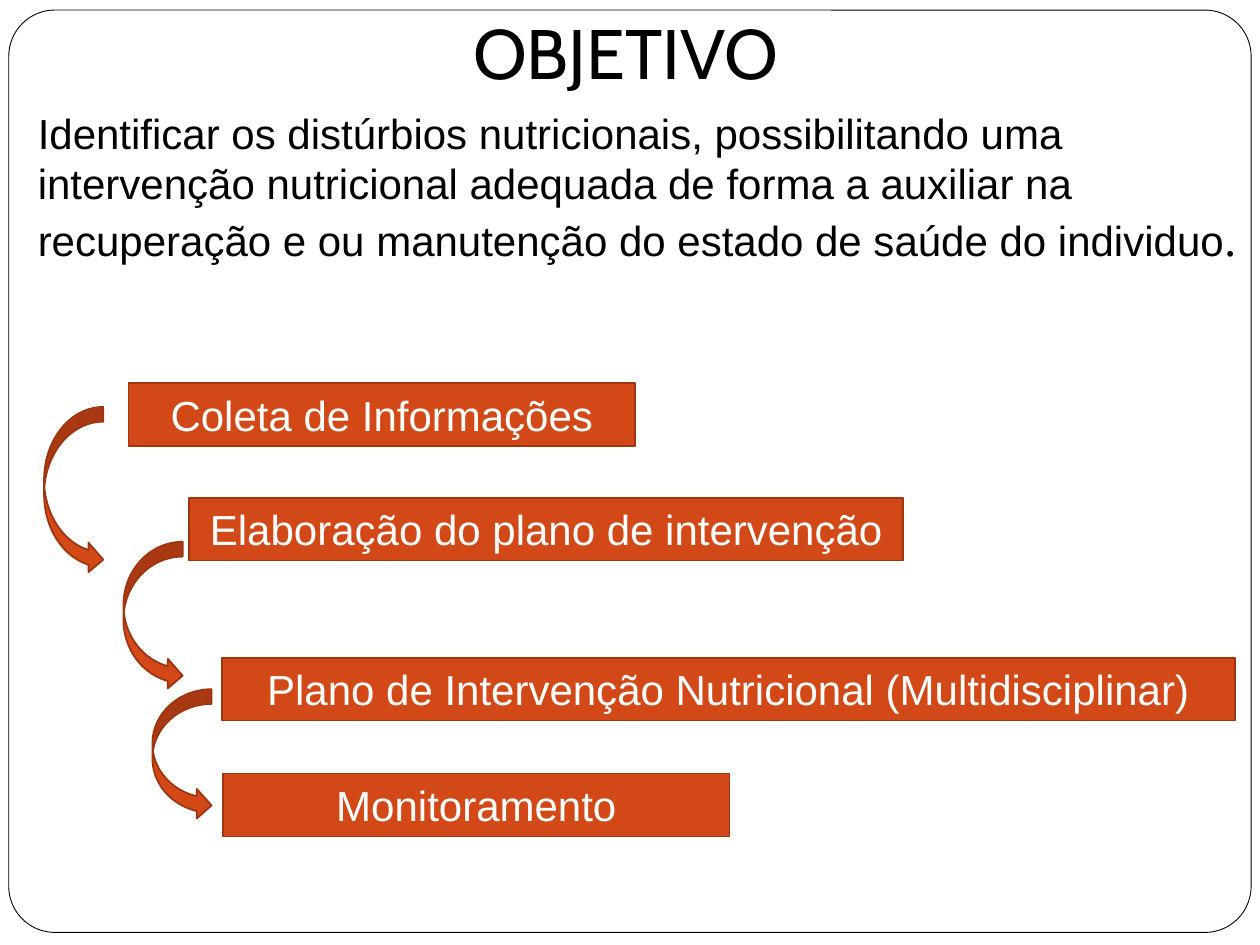
"""Build the OBJETIVO slide: a goal statement above a cascade of four steps."""
from lxml import etree
from pptx import Presentation
from pptx import util as u
from pptx.dml.color import RGBColor
from pptx.enum import shapes, text
from pptx.oxml.ns import qn

THEME = {
    "ink": RGBColor(0, 0, 0),
    "paper": RGBColor(255, 255, 255),
    "accent": RGBColor(0xD3, 0x48, 0x17),
    "edge": RGBColor(0x9C, 0x35, 0x11),
    "title": ("Cabin", 40),
    "body": ("Arial", 24),
    "stop": ("Times New Roman", 28),
}
TITLE = "OBJETIVO"
GOAL = (
    "Identificar os distúrbios nutricionais, possibilitando uma intervenção "
    "nutricional adequada de forma a auxiliar na recuperação e ou manutenção "
    "do estado de saúde do individuo"
)
STEP_HEIGHT = 0.5
STEPS = [
    ("Coleta de Informações", 1.02, 3.04, 4.02),
    ("Elaboração do plano de intervenção", 1.5, 3.95, 5.67),
    ("Plano de Intervenção Nutricional (Multidisciplinar)", 1.76, 5.22, 8.04),
    ("Monitoramento", 1.77, 6.14, 4.02),
]
ARROW_WIDTH = 0.47
ARROWS = [(0.35, 3.23, 1.33), (0.98, 4.3, 1.18), (1.21, 5.47, 1.04)]


def style(font, role, color):
    font.name, size = THEME[role]
    font.size = u.Pt(size)
    font.color.rgb = THEME[color]


def place(box, left, top, width, height):
    box.left, box.top = u.Inches(left), u.Inches(top)
    box.width, box.height = u.Inches(width), u.Inches(height)


def add_accent_shape(page, kind, *area):
    box = page.shapes.add_shape(kind, *map(u.Inches, area))
    box.shadow.inherit = False
    box.fill.solid()
    box.fill.fore_color.rgb = THEME["accent"]
    box.line.color.rgb = THEME["edge"]
    box.line.width = u.Pt(1)
    return box


def add_frame(page):
    frame = page.shapes.add_shape(
        shapes.MSO_SHAPE.ROUNDED_RECTANGLE,
        *map(u.Inches, (0.07, 0.08, 9.86, 7.32)),
    )
    frame.adjustments[0] = 0.05
    frame.shadow.inherit = False
    frame.fill.background()
    frame.line.color.rgb = THEME["ink"]
    frame.line.width = u.Pt(0.5)


def fill_title(box):
    place(box, 0.2, 0.21, 9.53, 0.63)
    frame = box.text_frame
    frame.text = TITLE
    frame.auto_size = text.MSO_AUTO_SIZE.NONE
    frame.vertical_anchor = text.MSO_ANCHOR.BOTTOM
    frame.margin_bottom = u.Inches(0.1)
    para = frame.paragraphs[0]
    para.alignment = text.PP_ALIGN.CENTER
    style(para.font, "title", "ink")


def fill_goal(box):
    place(box, 0.2, 0.8, 9.8, 6.26)
    box.text_frame.auto_size = text.MSO_AUTO_SIZE.NONE
    para = box.text_frame.paragraphs[0]
    para.space_before = u.Pt(5.8)
    for words, role in ((GOAL, "body"), (".", "stop")):
        span = para.add_run()
        span.text = words
        style(span.font, role, "ink")
    properties = para._p.get_or_add_pPr()
    properties.set("marL", "0")
    properties.set("indent", "0")
    etree.SubElement(properties, qn("a:buNone"))


def add_step(page, label, left, top, width):
    box = add_accent_shape(
        page, shapes.MSO_SHAPE.RECTANGLE, left, top, width, STEP_HEIGHT
    )
    frame = box.text_frame
    frame.text = label
    frame.word_wrap = True
    frame.vertical_anchor = text.MSO_ANCHOR.MIDDLE
    para = frame.paragraphs[0]
    para.alignment = text.PP_ALIGN.CENTER
    style(para.font, "body", "paper")


def main():
    deck = Presentation()
    deck.slide_width, deck.slide_height = u.Inches(10), u.Inches(7.5)
    page = deck.slides.add_slide(deck.slide_layouts[1])
    fill_title(page.shapes.title)
    fill_goal(page.placeholders[1])
    add_frame(page)
    for step in STEPS:
        add_step(page, *step)
    for left, top, height in ARROWS:
        add_accent_shape(
            page, shapes.MSO_SHAPE.CURVED_RIGHT_ARROW, left, top, ARROW_WIDTH, height
        )
    deck.save("out.pptx")


if __name__ == "__main__":
    main()
